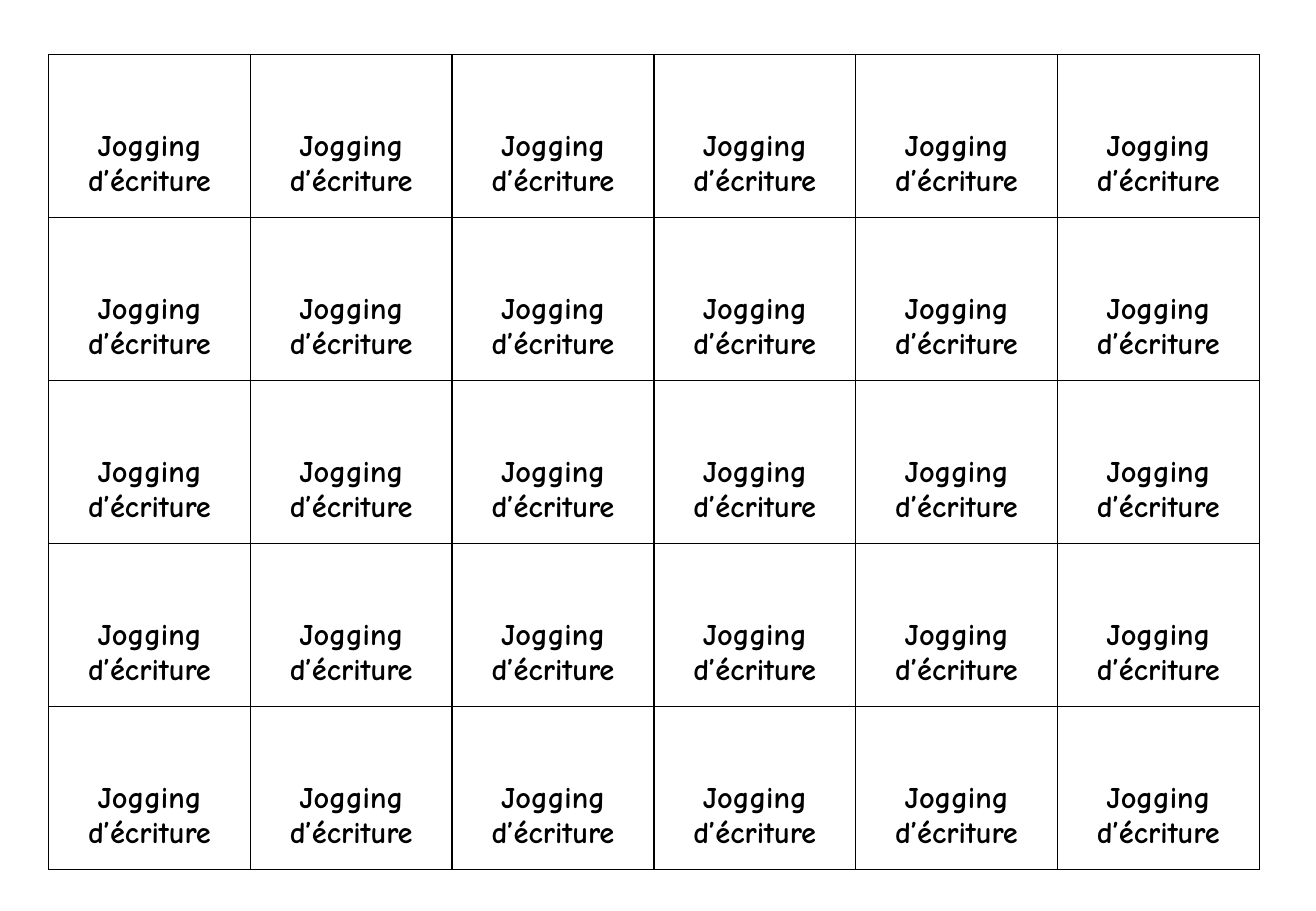
from dataclasses import dataclass

from lxml.etree import SubElement
from pptx import Presentation
from pptx.dml.color import RGBColor
from pptx.enum.text import MSO_ANCHOR as Anchor, PP_ALIGN as Align
from pptx.oxml.ns import qn
from pptx.util import Pt


@dataclass(frozen=True)
class Theme:
    ink: str = "000000"
    font: str = "Comic Neue"
    label_size: float = 18
    border_width: float = 1
    cell_margin: float = 10.8


@dataclass(frozen=True)
class Box:
    left: float
    top: float
    width: float
    height: float


THEME = Theme()
LABEL = "Jogging d’écriture"
ROWS, COLUMNS = 5, 6


def add_borders(cell):
    properties = cell._tc.get_or_add_tcPr()
    for side in ("a:lnL", "a:lnR", "a:lnT", "a:lnB"):
        line = SubElement(properties, qn(side), w=str(Pt(THEME.border_width)))
        fill = SubElement(line, qn("a:solidFill"))
        SubElement(fill, qn("a:srgbClr"), val=THEME.ink)


def format_label(cell):
    """Write the label centred at the foot of a bordered, unfilled cell."""
    add_borders(cell)
    cell.fill.background()
    cell.vertical_anchor = Anchor.BOTTOM
    margin = Pt(THEME.cell_margin)
    cell.margin_left = cell.margin_right = margin
    cell.margin_top = cell.margin_bottom = margin
    cell.text_frame.text = LABEL
    paragraph = cell.text_frame.paragraphs[0]
    paragraph.alignment = Align.CENTER
    font = paragraph.runs[0].font
    font.name = THEME.font
    font.size = Pt(THEME.label_size)
    font.bold = True
    font.color.rgb = RGBColor.from_string(THEME.ink)


def add_label_sheet(slide, box):
    """Fill the box with equal cells, one label in each."""
    frame = slide.shapes.add_table(
        ROWS, COLUMNS, Pt(box.left), Pt(box.top), Pt(box.width), Pt(box.height)
    )
    table = frame.table
    table.first_row = table.horz_banding = False
    for column in table.columns:
        column.width = Pt(box.width / COLUMNS)
    for row in table.rows:
        row.height = Pt(box.height / ROWS)
    for cell in table.iter_cells():
        format_label(cell)


def main():
    presentation = Presentation()
    presentation.slide_width = Pt(780)
    presentation.slide_height = Pt(540)
    blank_layout = presentation.slide_layouts[6]
    slide = presentation.slides.add_slide(blank_layout)
    add_label_sheet(slide, Box(28.8, 32.4, 717.6, 483))
    presentation.save("out.pptx")


if __name__ == "__main__":
    main()
